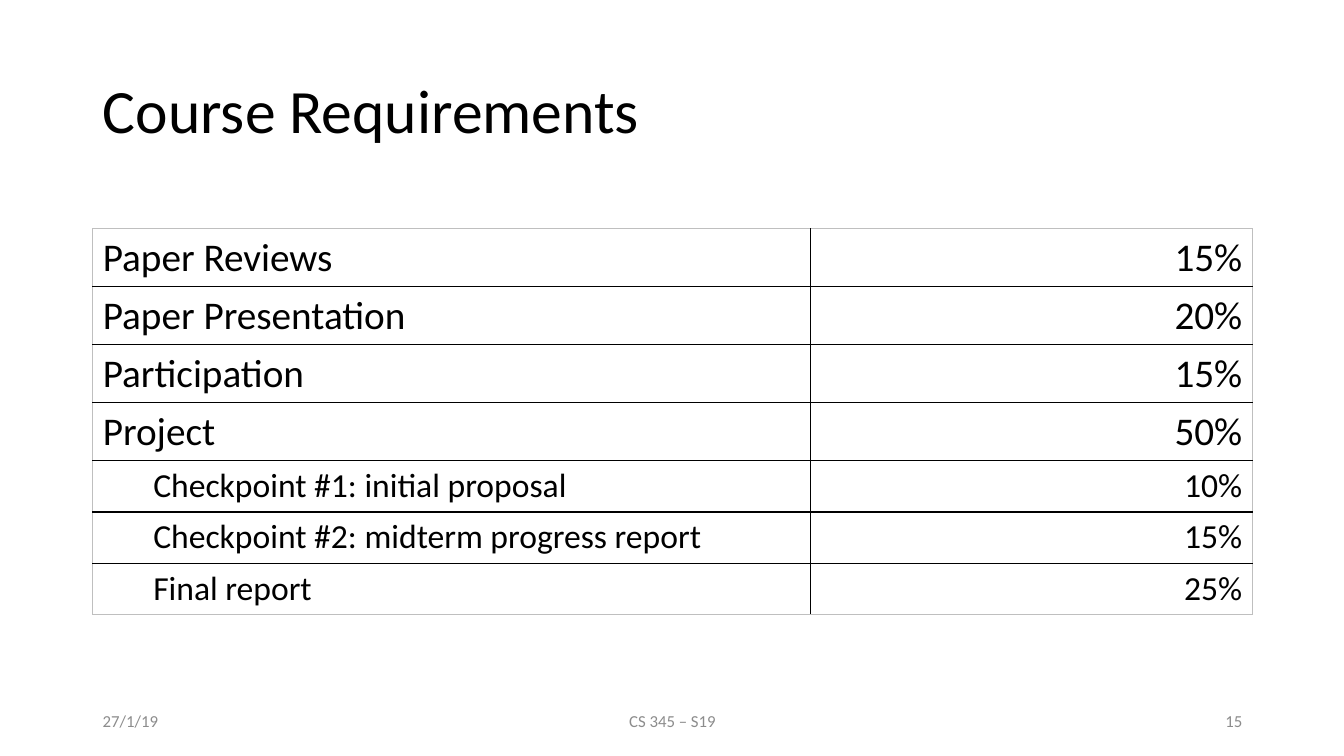
from dataclasses import dataclass

from lxml.etree import SubElement
from pptx import Presentation
from pptx.dml.color import RGBColor
from pptx.enum.text import MSO_ANCHOR as Anchor, PP_ALIGN as Align
from pptx.oxml import parse_xml
from pptx.oxml.ns import nsdecls, qn
from pptx.util import Inches, Pt


@dataclass(frozen=True)
class Theme:
    font: str = "Calibri"
    ink: str = "000000"
    muted: str = "8C8C8C"
    edge: str = "BFBFBF"
    title: int = 44
    item: int = 28
    subitem: int = 24
    footer: int = 12
    rule: float = 1


theme = Theme()


def write(frame, text, size, color, align=Align.LEFT):
    frame.text = text
    para = frame.paragraphs[0]
    para.alignment = align
    font = para.runs[0].font
    font.name, font.size = theme.font, Pt(size)
    font.color.rgb = RGBColor.from_string(color)
    return para


def draw_borders(cell, colors):
    properties = cell._tc.get_or_add_tcPr()
    for index, (side, color) in enumerate(colors.items()):
        line = parse_xml(f'<a:ln{side} {nsdecls("a")} w="{Pt(theme.rule)}"/>')
        fill = SubElement(line, qn("a:solidFill"))
        SubElement(fill, qn("a:srgbClr"), val=color)
        properties.insert(index, line)


deck = Presentation()
deck.slide_width, deck.slide_height = Inches(13.33), Inches(7.5)
page = deck.slides.add_slide(deck.slide_layouts[5])
margin = Inches(0.92)
content_width = Inches(11.5)

title = page.shapes.title
title.left, title.top = margin, Inches(0.4)
title.width, title.height = content_width, Inches(1.45)
title.text_frame.vertical_anchor = Anchor.MIDDLE
para = write(title.text_frame, "Course Requirements", theme.title, theme.ink)
para.line_spacing = 0.9

requirements = [
    ("Paper Reviews", "15%", 0),
    ("Paper Presentation", "20%", 0),
    ("Participation", "15%", 0),
    ("Project", "50%", 0),
    ("Checkpoint #1: initial proposal", "10%", 1),
    ("Checkpoint #2: midterm progress report", "15%", 1),
    ("Final report", "25%", 1),
]
row_heights = [Inches(0.5 if level else 0.57) for _, _, level in requirements]
last_row = len(requirements) - 1
table = page.shapes.add_table(
    len(requirements), 2, margin, Inches(2.27), content_width, sum(row_heights)
).table
table.first_row = table.horz_banding = False
table.columns[0].width = Inches(7.12)
table.columns[1].width = content_width - Inches(7.12)

for row, (name, weight, level) in enumerate(requirements):
    table.rows[row].height = row_heights[row]
    size = theme.subitem if level else theme.item
    for column, (text, align) in enumerate([(name, Align.LEFT), (weight, Align.RIGHT)]):
        cell = table.cell(row, column)
        cell.fill.background()
        para = write(cell.text_frame, text, size, theme.ink, align)
        if level and column == 0:
            para.level = level
            para._p.get_or_add_pPr().set("marL", str(Inches(0.5)))
        outer = {"L": column == 0, "R": column == 1, "T": row == 0, "B": row == last_row}
        draw_borders(cell, {side: theme.edge if is_outer else theme.ink
                            for side, is_outer in outer.items()})

footers = [
    ("27/1/19", 3, 0, Align.LEFT),
    ("CS 345 – S19", 4.5, 0.5, Align.CENTER),
    ("15", 3, 1, Align.RIGHT),
]
for text, width, share, align in footers:
    left = margin + int((content_width - Inches(width)) * share)
    box = page.shapes.add_textbox(left, Inches(6.95), Inches(width), Inches(0.4))
    box.text_frame.word_wrap = True
    box.text_frame.vertical_anchor = Anchor.MIDDLE
    write(box.text_frame, text, theme.footer, theme.muted, align)

deck.save("out.pptx")
